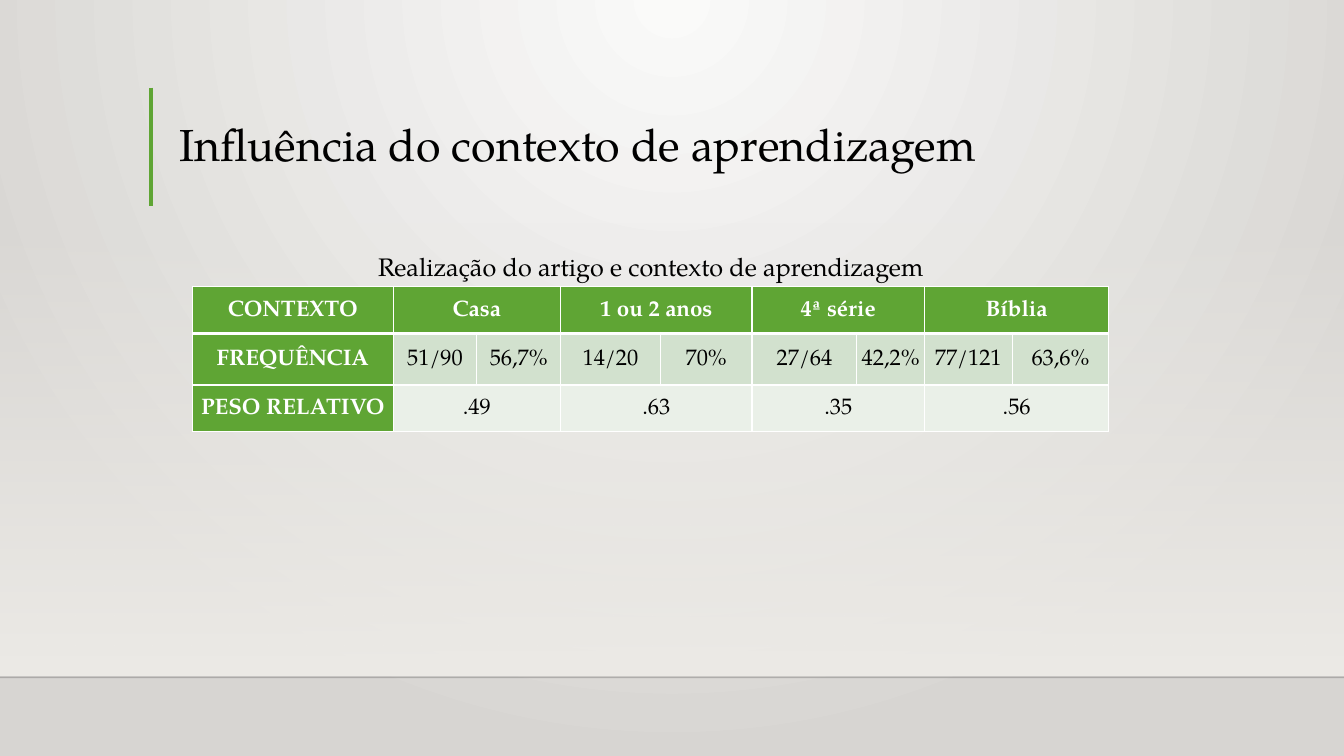
from lxml import etree
from pptx import Presentation
from pptx.dml.color import RGBColor
from pptx.enum import shapes, text
from pptx.oxml import ns, parse_xml
from pptx.util import Inches, Pt

FONT = "TeX Gyre Pagella"
BLACK = RGBColor(0, 0, 0)
WHITE = RGBColor(0xFF, 0xFF, 0xFF)
GREEN = RGBColor(0x5F, 0xA5, 0x34)
MID_GREEN = RGBColor(0xD2, 0xE1, 0xCE)
PALE_GREEN = RGBColor(0xEA, 0xF0, 0xE8)
FLOOR_LINE = RGBColor(0, 0, 1)
BACK_LIGHT = RGBColor(0xFA, 0xFA, 0xF9)
BACK_DARK = RGBColor(0xD7, 0xD5, 0xD2)
HAZE = RGBColor(0xED, 0xEB, 0xE7)

RADIAL = ('<a:path path="circle"><a:fillToRect l="43000" t="0" r="43000" '
          'b="100000"/></a:path>')
DOWNWARD = '<a:lin ang="5400000" scaled="0"/>'

COLUMN_WIDTHS = [1.99, 0.83, 0.83, 0.99, 0.91, 1.04, 0.67, 0.87, 0.96]
ROW_HEIGHTS = [0.47, 0.51, 0.46]
ROW_LABELS = ["CONTEXTO", "FREQUÊNCIA", "PESO RELATIVO"]
CONTEXTS = [  # context, count, share, relative weight
    ("Casa", "51/90", "56,7%", ".49"),
    ("1 ou 2 anos", "14/20", "70%", ".63"),
    ("4ª série", "27/64", "42,2%", ".35"),
    ("Bíblia", "77/121", "63,6%", ".56"),
]


def set_gradient(element, fill, stops, direction):
    """Replace the fill of an element by a gradient of (position, colour, opacity)."""
    fill.solid()
    stop_xml = "".join(
        f'<a:gs pos="{position * 1000}"><a:srgbClr val="{color}">'
        f'<a:alpha val="{opacity * 1000}"/></a:srgbClr></a:gs>'
        for position, color, opacity in stops)
    gradient = parse_xml(
        f'<a:gradFill {ns.nsdecls("a")} rotWithShape="1">'
        f'<a:gsLst>{stop_xml}</a:gsLst>{direction}</a:gradFill>')
    solid = element.find(ns.qn("a:solidFill"))
    element.replace(solid, gradient)


def add_line(slide, x1, y1, x2, y2, color, width, opacity=100):
    line = slide.shapes.add_connector(
        shapes.MSO_CONNECTOR.STRAIGHT,
        Inches(x1), Inches(y1), Inches(x2), Inches(y2))
    line.line.color.rgb = color
    line.line.width = Pt(width)
    properties = line.element.spPr
    if opacity < 100:
        color_element = properties.find(".//" + ns.qn("a:srgbClr"))
        alpha = etree.SubElement(color_element, ns.qn("a:alpha"))
        alpha.set("val", str(opacity * 1000))
    etree.SubElement(properties, ns.qn("a:effectLst"))


def write(frame, words, size, color=BLACK, bold=False, align=None, spacing=None):
    paragraph = frame.paragraphs[0]
    paragraph.alignment = align
    paragraph.line_spacing = spacing
    run = paragraph.add_run()
    run.text = words
    run.font.name = FONT
    run.font.size = Pt(size)
    run.font.bold = bold
    run.font.color.rgb = color


def add_text(slide, left, top, width, height, words, size, **style):
    box = slide.shapes.add_textbox(
        Inches(left), Inches(top), Inches(width), Inches(height))
    box.text_frame.word_wrap = True
    box.text_frame.vertical_anchor = text.MSO_ANCHOR.MIDDLE
    write(box.text_frame, words, size, **style)


def set_borders(cell, row):
    """White 1 pt borders, with 3 pt under the header row."""
    properties = cell._tc.get_or_add_tcPr()
    widths = {"L": 1, "R": 1, "T": 3 if row == 1 else 1, "B": 3 if row == 0 else 1}
    for side, width in widths.items():
        properties.append(parse_xml(
            f'<a:ln{side} {ns.nsdecls("a")} w="{Pt(width)}"><a:solidFill>'
            f'<a:srgbClr val="{WHITE}"/></a:solidFill></a:ln{side}>'))


def fill_cell(cell, words, strong, tight=False):
    side, top = (0, 0) if tight else (0.07, 0.01)
    cell.margin_left = cell.margin_right = Inches(side)
    cell.margin_top, cell.margin_bottom = Inches(top), 0
    cell.vertical_anchor = text.MSO_ANCHOR.MIDDLE
    write(cell.text_frame, words, 16, WHITE if strong else BLACK, strong,
          text.PP_ALIGN.CENTER, 1.07)


def add_context_table(slide):
    table = slide.shapes.add_table(
        len(ROW_HEIGHTS), len(COLUMN_WIDTHS), Inches(1.91), Inches(2.84),
        Inches(sum(COLUMN_WIDTHS)), Inches(sum(ROW_HEIGHTS))).table
    for column, width in zip(table.columns, COLUMN_WIDTHS):
        column.width = Inches(width)
    for row, height in zip(table.rows, ROW_HEIGHTS):
        row.height = Inches(height)

    # Borders and fills
    for row, body_color in enumerate([GREEN, MID_GREEN, PALE_GREEN]):
        for column in range(len(COLUMN_WIDTHS)):
            cell = table.cell(row, column)
            set_borders(cell, row)
            cell.fill.solid()
            cell.fill.fore_color.rgb = GREEN if column == 0 else body_color

    # Row labels, then two columns for each context
    for row, label in enumerate(ROW_LABELS):
        fill_cell(table.cell(row, 0), label, True)
    for index, (context, count, share, weight) in enumerate(CONTEXTS):
        column = 1 + 2 * index
        for row in (0, 2):
            table.cell(row, column).merge(table.cell(row, column + 1))
        fill_cell(table.cell(0, column), context, True)
        fill_cell(table.cell(1, column), count, False)
        fill_cell(table.cell(1, column + 1), share, False, tight=True)
        fill_cell(table.cell(2, column), weight, False)


def add_backdrop(slide):
    background_fill = slide.background.fill
    background_fill.solid()
    set_gradient(slide.element.find(".//" + ns.qn("p:bgPr")), background_fill,
                 [(0, BACK_LIGHT, 100), (100, BACK_DARK, 100)], RADIAL)
    haze = slide.shapes.add_shape(
        shapes.MSO_SHAPE.RECTANGLE, 0, Inches(2.2), Inches(13.33), Inches(4.5))
    haze.shadow.inherit = False
    set_gradient(haze.element.spPr, haze.fill,
                 [(0, HAZE, 0), (100, HAZE, 100)], DOWNWARD)
    haze.line.fill.background()
    add_line(slide, 0, 6.72, 13.33, 6.72, FLOOR_LINE, 1, opacity=20)


def main():
    presentation = Presentation()
    presentation.slide_width = Inches(13.33)
    presentation.slide_height = Inches(7.5)
    slide = presentation.slides.add_slide(presentation.slide_layouts[6])

    add_backdrop(slide)

    # Title with its accent bar
    add_line(slide, 1.5, 0.87, 1.5, 2.04, GREEN, 3)
    add_text(slide, 1.68, 0.88, 10.41, 1.15,
             "Influência do contexto de aprendizagem", 32, spacing=0.9)

    # Table and its caption
    add_context_table(slide)
    add_text(slide, 1.91, 2.44, 9.09, 0.4,
             "Realização do artigo e contexto de aprendizagem", 18,
             align=text.PP_ALIGN.CENTER)

    presentation.save("out.pptx")


if __name__ == "__main__":
    main()
